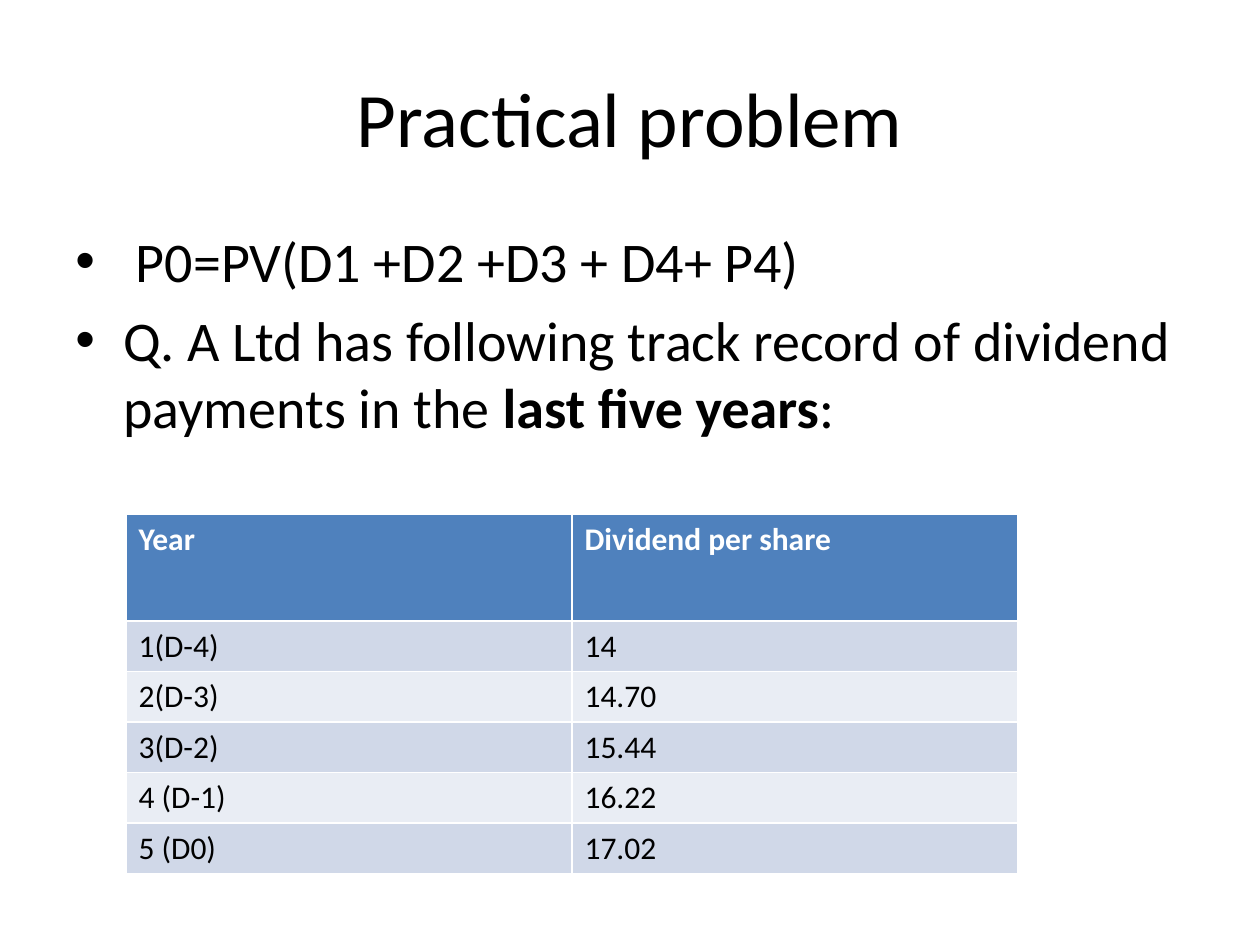
from dataclasses import dataclass

from lxml import etree
from pptx import Presentation
from pptx.dml.color import RGBColor as RGB
from pptx.enum.text import MSO_ANCHOR as ANCHOR, PP_ALIGN as ALIGN
from pptx.oxml.ns import qn
from pptx.util import Inches, Pt


@dataclass(frozen=True)
class Theme:
    font: str = "Calibri"
    text: str = "000000"
    header_text: str = "FFFFFF"
    header_fill: str = "4F81BD"
    bands: tuple = ("D0D8E8", "E9EDF4")
    title_size: int = 44
    body_size: int = 32
    table_size: int = 18


theme = Theme()


def style_runs(p, size, color=theme.text):
    for r in p.runs:
        r.font.name = theme.font
        r.font.size = Pt(size)
        r.font.color.rgb = RGB.from_string(color)


prs = Presentation()
prs.slide_width, prs.slide_height = Inches(10), Inches(7.5)
s = prs.slides.add_slide(prs.slide_layouts[5])

# Title
title = s.shapes.title
title.left, title.top = Inches(0.5), Inches(0.3)
title.width, title.height = Inches(9), Inches(1.25)
tf = title.text_frame
tf.text = "Practical problem"
tf.vertical_anchor = ANCHOR.MIDDLE
tf.paragraphs[0].alignment = ALIGN.CENTER
style_runs(tf.paragraphs[0], theme.title_size)

# Bulleted text: each bullet is a list of (text, bold) runs
bullets = [
    [(" P0=PV(D1 +D2 +D3 + D4+ P4)", False)],
    [
        ("Q. A Ltd has following track record of dividend payments in the ", False),
        ("last five years", True),
        (":", False),
    ],
]
body = s.shapes.add_textbox(Inches(0.5), Inches(1.75), Inches(9), Inches(4.95))
tf = body.text_frame
tf.word_wrap = True
for i, runs in enumerate(bullets):
    p = tf.add_paragraph() if i else tf.paragraphs[0]
    for text, bold in runs:
        r = p.add_run()
        r.text = text
        r.font.bold = bold
    style_runs(p, theme.body_size)
    p.space_before = Pt(0.2 * theme.body_size)
    pPr = p._p.get_or_add_pPr()
    pPr.set("marL", str(Inches(0.38)))
    pPr.set("indent", str(-Inches(0.38)))
    etree.SubElement(pPr, qn("a:buFont")).set("typeface", "Arial")
    etree.SubElement(pPr, qn("a:buChar")).set("char", "•")

# Dividend table
rows = [
    ("Year", "Dividend per share"),
    ("1(D-4)", "14"),
    ("2(D-3)", "14.70"),
    ("3(D-2)", "15.44"),
    ("4 (D-1)", "16.22"),
    ("5 (D0)", "17.02"),
]
table = s.shapes.add_table(
    len(rows), 2, Inches(1), Inches(4.08), Inches(7.08), Inches(2.85)
).table
for i, values in enumerate(rows):
    header = i == 0
    table.rows[i].height = Inches(0.85 if header else 0.4)
    fill = theme.header_fill if header else theme.bands[(i - 1) % 2]
    color = theme.header_text if header else theme.text
    for cell, value in zip(table.rows[i].cells, values):
        cell.fill.solid()
        cell.fill.fore_color.rgb = RGB.from_string(fill)
        p = cell.text_frame.paragraphs[0]
        p.text = value
        style_runs(p, theme.table_size, color)
        p.runs[0].font.bold = header

prs.save("out.pptx")
